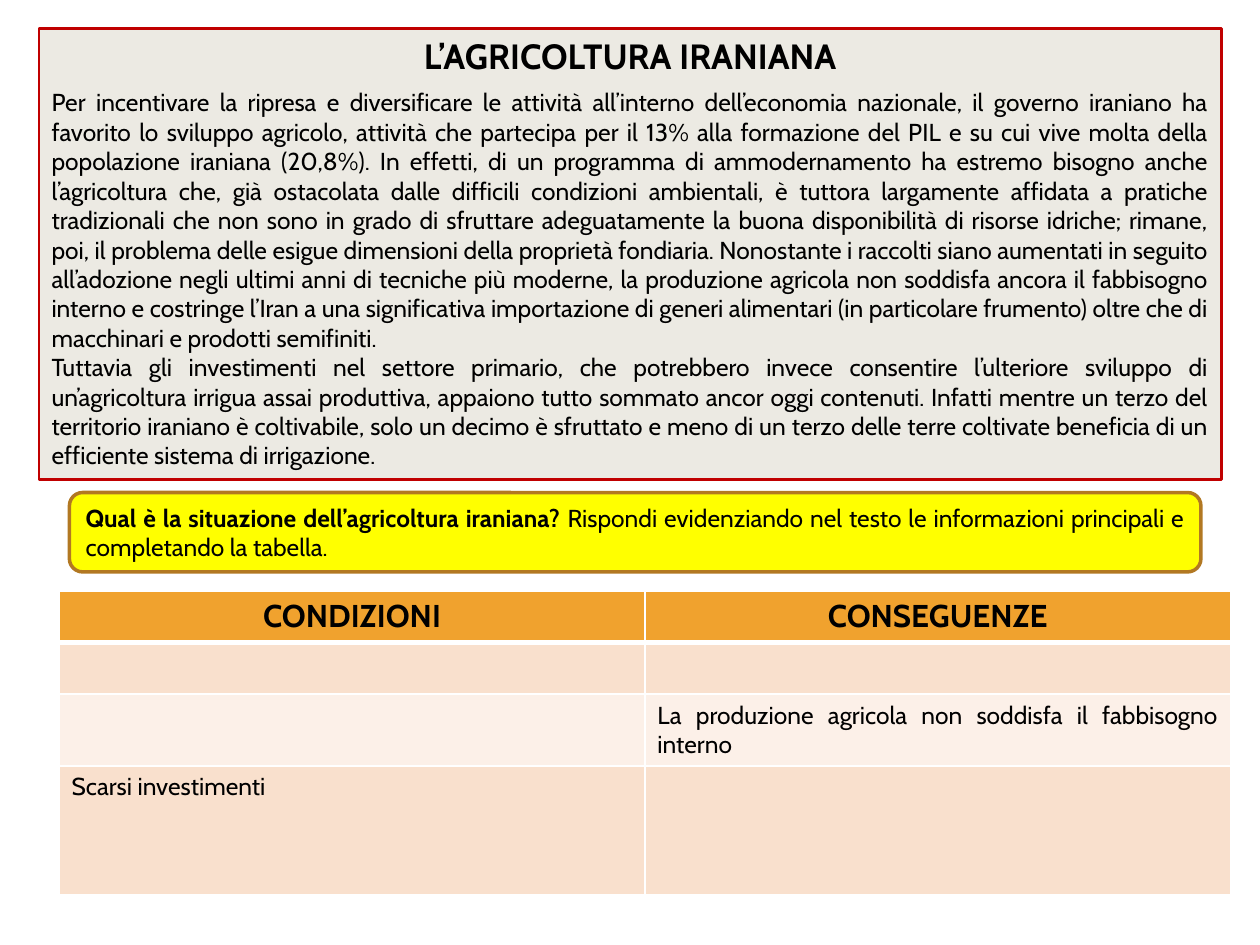
from lxml import etree
from pptx import Presentation
from pptx.dml.color import RGBColor
from pptx.enum.shapes import MSO_SHAPE
from pptx.enum.text import MSO_ANCHOR, MSO_AUTO_SIZE, PP_ALIGN
from pptx.oxml.ns import qn
from pptx.util import Cm, Pt

RECT, ROUNDED = MSO_SHAPE.RECTANGLE, MSO_SHAPE.ROUNDED_RECTANGLE
TOP, MIDDLE = MSO_ANCHOR.TOP, MSO_ANCHOR.MIDDLE
LEFT, CENTER, JUSTIFY = PP_ALIGN.LEFT, PP_ALIGN.CENTER, PP_ALIGN.JUSTIFY
FIT_SHAPE = MSO_AUTO_SIZE.SHAPE_TO_FIT_TEXT

FONT = "Cabin"
COLORS = {
    "text": "000000",
    "panel": "ECEAE3",
    "panel_line": "C00000",
    "question": "FFFF00",
    "question_line": "B27822",
    "header": "F0A22E",
    "band_dark": "F9E0CD",
    "band_light": "FCF0E8",
    "border": "FFFFFF",
}

TITLE = "L’AGRICOLTURA IRANIANA"
# Each paragraph is a list of sentences
BODY = [
    [
        "Per incentivare la ripresa e diversificare le attività all’interno "
        "dell’economia nazionale, il governo iraniano ha favorito lo sviluppo "
        "agricolo, attività che partecipa per il 13% alla formazione del PIL "
        "e su cui vive molta della popolazione iraniana (20,8%).",
        "In effetti, di un programma di ammodernamento ha estremo bisogno "
        "anche l’agricoltura che, già ostacolata dalle difficili condizioni "
        "ambientali, è tuttora largamente affidata a pratiche tradizionali "
        "che non sono in grado di sfruttare adeguatamente la buona "
        "disponibilità di risorse idriche; rimane, poi, il problema delle "
        "esigue dimensioni della proprietà fondiaria.",
        "Nonostante i raccolti siano aumentati in seguito all’adozione negli "
        "ultimi anni di tecniche più moderne, la produzione agricola non "
        "soddisfa ancora il fabbisogno interno e costringe l’Iran a una "
        "significativa importazione di generi alimentari (in particolare "
        "frumento) oltre che di macchinari e prodotti semifiniti.",
    ],
    [
        "Tuttavia gli investimenti nel settore primario, che potrebbero "
        "invece consentire l’ulteriore sviluppo di un’agricoltura irrigua "
        "assai produttiva, appaiono tutto sommato ancor oggi contenuti.",
        "Infatti mentre un terzo del territorio iraniano è coltivabile, solo "
        "un decimo è sfruttato e meno di un terzo delle terre coltivate "
        "beneficia di un efficiente sistema di irrigazione.",
    ],
]
QUESTION = "Qual è la situazione dell’agricoltura iraniana? "
TASK = "Rispondi evidenziando nel testo le informazioni principali e completando la tabella."

# Row height in cm, fill, alignment of each cell, cell texts
ROWS = [
    (1.04, "header", (CENTER, CENTER), ("CONDIZIONI", "CONSEGUENZE")),
    (1.04, "band_dark", (LEFT, LEFT), ("", "")),
    (1.45, "band_light", (LEFT, JUSTIFY),
     ("", "La produzione agricola non soddisfa il fabbisogno interno")),
    (2.59, "band_dark", (LEFT, LEFT), ("Scarsi investimenti", "")),
]


def rgb(name):
    return RGBColor.from_string(COLORS[name])


def format_run(r, size, bold=False):
    r.font.name = FONT
    r.font.size = Pt(size)
    r.font.bold = bold
    r.font.color.rgb = rgb("text")


def format_paragraph(p, size, align, bold=False):
    p.alignment = align
    for r in p.runs:
        format_run(r, size, bold)


def add_box(s, shape, left, top, width, height, fill, line_width, anchor):
    sp = s.shapes.add_shape(shape, Cm(left), Cm(top), Cm(width), Cm(height))
    sp.shadow.inherit = False
    sp.fill.solid()
    sp.fill.fore_color.rgb = rgb(fill)
    sp.line.color.rgb = rgb(fill + "_line")
    sp.line.width = Pt(line_width)
    tf = sp.text_frame
    tf.word_wrap = True
    tf.vertical_anchor = anchor
    return tf


def add_article(s):
    tf = add_box(s, RECT, 0.79, 0.58, 23.83, 9.09, "panel", 1.5, TOP)
    tf.auto_size = FIT_SHAPE
    tf.text = "\n".join([TITLE, *(" ".join(sentences) for sentences in BODY)])
    title, *body = tf.paragraphs
    format_paragraph(title, 20, CENTER, bold=True)
    title.space_after = Pt(6)
    for p in body:
        format_paragraph(p, 14, JUSTIFY)


def add_question(s):
    tf = add_box(s, ROUNDED, 1.4, 9.93, 22.81, 1.6, "question", 2, MIDDLE)
    tf.text = QUESTION
    p = tf.paragraphs[0]
    format_paragraph(p, 14, JUSTIFY, bold=True)
    r = p.add_run()
    r.text = TASK
    format_run(r, 14)


def set_borders(cell, widths):
    tc_pr = cell._tc.get_or_add_tcPr()
    for side, width in zip("LRTB", widths):
        ln = etree.SubElement(tc_pr, qn(f"a:ln{side}"), w=str(Pt(width)))
        fill = etree.SubElement(ln, qn("a:solidFill"))
        etree.SubElement(fill, qn("a:srgbClr"), val=COLORS["border"])


def add_answer_table(s):
    height = sum(row[0] for row in ROWS)
    table = s.shapes.add_table(len(ROWS), 2, Cm(1.19), Cm(11.91),
                               Cm(23.62), Cm(height)).table
    for i, (row_height, fill, aligns, texts) in enumerate(ROWS):
        table.rows[i].height = Cm(row_height)
        header = i == 0
        top = 3 if i == 1 else 1
        bottom = 3 if header else 1
        for cell, align, text in zip(table.rows[i].cells, aligns, texts):
            set_borders(cell, (1, 1, top, bottom))
            cell.fill.solid()
            cell.fill.fore_color.rgb = rgb(fill)
            if text:
                cell.text = text
                format_paragraph(cell.text_frame.paragraphs[0],
                                 18 if header else 14, align, header)


def main():
    prs = Presentation()
    prs.slide_width, prs.slide_height = Cm(25.4), Cm(19.05)
    s = prs.slides.add_slide(prs.slide_layouts[6])
    add_article(s)
    add_question(s)
    add_answer_table(s)
    prs.save("out.pptx")


if __name__ == "__main__":
    main()
